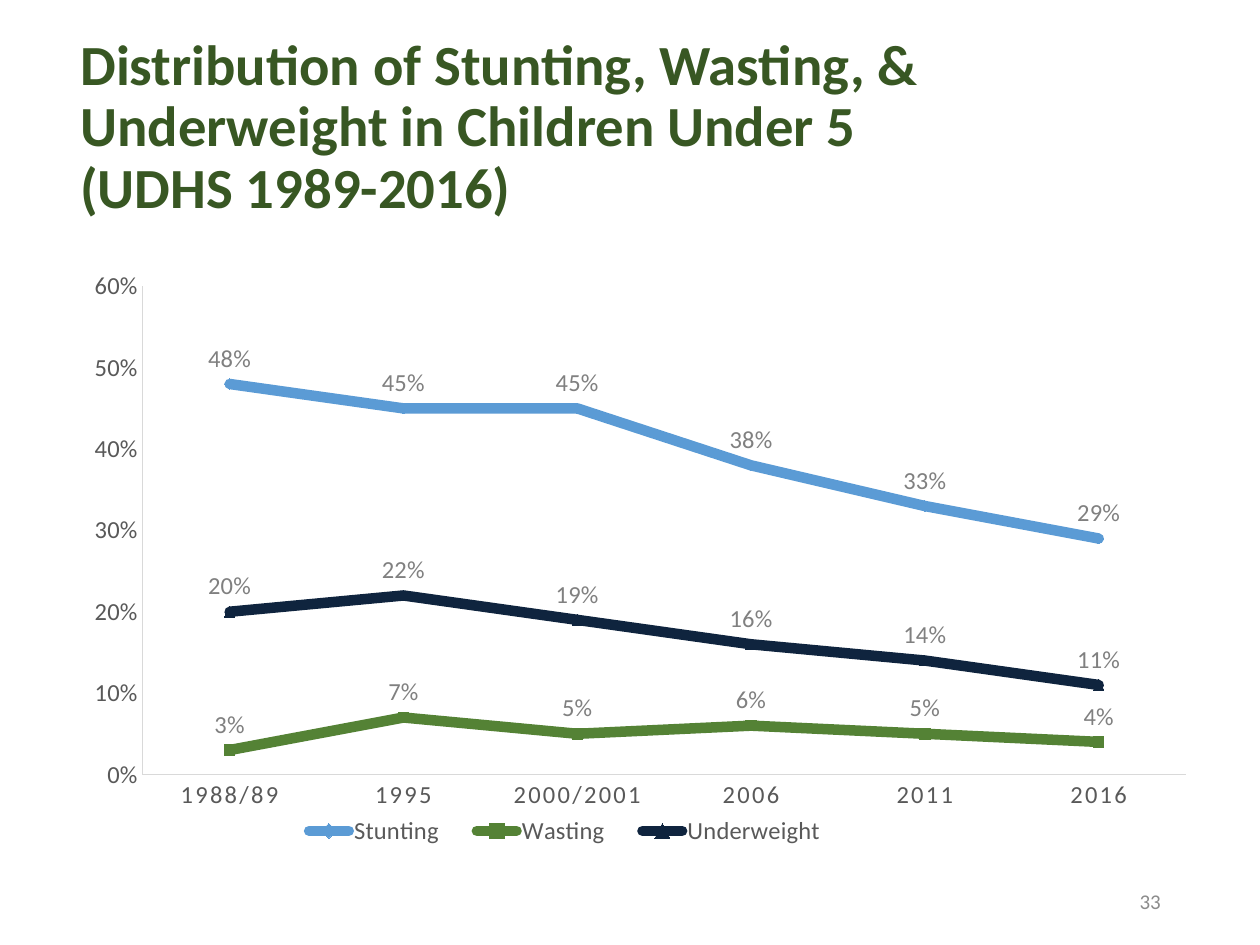
from lxml import etree
from pptx import Presentation
from pptx import util as u
from pptx.chart.data import CategoryChartData
from pptx.dml.color import RGBColor
from pptx.enum import chart as ch, text
from pptx.oxml.ns import qn

# Content
TITLE = ["Distribution of Stunting, Wasting, &",
         "Underweight in Children Under 5",
         "(UDHS 1989-2016)"]
NUMBER = "33"
YEARS = ["1988/89", "1995", "2000/2001", "2006", "2011", "2016"]
MARK = ch.XL_MARKER_STYLE
SERIES = [  # name, values, line colour, marker, marker colour
    ("Stunting", [0.48, 0.45, 0.45, 0.38, 0.33, 0.29],
     "5B9BD5", MARK.DIAMOND, "5B9BD5"),
    ("Wasting", [0.03, 0.07, 0.05, 0.06, 0.05, 0.04],
     "548235", MARK.SQUARE, "548235"),
    ("Underweight", [0.2, 0.22, 0.19, 0.16, 0.14, 0.11],
     "0F243E", MARK.TRIANGLE, "A5A5A5"),
]

THEME = dict(font="Calibri", title="385723", axis="595959", label="808080",
             rule="D9D9D9", number="8C8C8C",
             big=32.4, mid=14, small=12, thick=6, thin=0.75)

# Places in cm: left, top, width, height
HEAD = (1.37, 0.61, 22.99, 3.96)
CHART = (1.57, 3.45, 22.56, 14)
FOOT = (17.93, 17.65, 5.72, 1.02)
# Places as shares of the chart
PLOT = (0.058, 0.166, 0.932, 0.703)
KEY = (0.18, 0.925, 0.51, 0.05)


def style(font, size, color, bold=False):
    font.name, font.size, font.bold = THEME["font"], u.Pt(size), bold
    font.color.rgb = RGBColor.from_string(color)


def stroke(line, color, width):
    line.color.rgb = RGBColor.from_string(color)
    line.width = u.Pt(width)


def write(slide, place, lines, size, color, bold=False, align=None):
    frame = slide.shapes.add_textbox(*map(u.Cm, place)).text_frame
    frame.word_wrap = True
    frame.vertical_anchor = text.MSO_ANCHOR.MIDDLE
    para = frame.paragraphs[0]
    para.alignment = align
    for i, line in enumerate(lines):
        if i:
            para.add_line_break()
        run = para.add_run()
        run.text = line
        style(run.font, size, color, bold)
    return para


def pin(node, at, place, inner=False):
    """Fix a chart part at a share of the chart's area."""
    for old in node.findall(qn("c:layout")):
        node.remove(old)
    layout = etree.Element(qn("c:layout"))
    manual = etree.SubElement(layout, qn("c:manualLayout"))
    pairs = [("xMode", "edge"), ("yMode", "edge"), *zip("xywh", place)]
    if inner:
        pairs.insert(0, ("layoutTarget", "inner"))
    for tag, val in pairs:
        etree.SubElement(manual, qn("c:" + tag)).set("val", str(val))
    node.insert(at, layout)


def draw(slide):
    data = CategoryChartData(number_format="0%")
    data.categories = YEARS
    for name, vals, *_ in SERIES:
        data.add_series(name, vals)
    chart = slide.shapes.add_chart(ch.XL_CHART_TYPE.LINE_MARKERS,
                                   *map(u.Cm, CHART), data).chart
    chart.has_title = False
    style(chart.font, THEME["mid"], "000000")

    # Axes
    for axis in (chart.category_axis, chart.value_axis):
        axis.has_major_gridlines = False
        axis.major_tick_mark = axis.minor_tick_mark = ch.XL_TICK_MARK.NONE
        stroke(axis.format.line, THEME["rule"], THEME["thin"])
        style(axis.tick_labels.font, THEME["mid"], THEME["axis"])
    props = chart.category_axis._element.find(".//" + qn("a:defRPr"))
    props.set("spc", "120")
    scale = chart.value_axis
    scale.minimum_scale, scale.maximum_scale, scale.major_unit = 0, 0.6, 0.1
    scale.tick_labels.number_format = "0%"
    scale.tick_labels.number_format_is_linked = False

    # Lines, markers and labels
    plot = chart.plots[0]
    plot.vary_by_categories = False
    for ser, (_, _, color, mark, fill) in zip(plot.series, SERIES):
        ser.smooth = False
        stroke(ser.format.line, color, THEME["thick"])
        ser.format.line._ln.set("cap", "rnd")
        ser.marker.style, ser.marker.size = mark, 6
        ser.marker.format.fill.solid()
        ser.marker.format.fill.fore_color.rgb = RGBColor.from_string(fill)
        stroke(ser.marker.format.line, fill, THEME["thin"])
        tags = ser.data_labels
        tags.show_value = True
        tags.position = ch.XL_LABEL_POSITION.ABOVE
        tags.number_format, tags.number_format_is_linked = "0%", False
        style(tags.font, THEME["mid"], THEME["label"])

    # Legend
    chart.has_legend = True
    key = chart.legend
    key.position = ch.XL_LEGEND_POSITION.TOP
    key.include_in_layout = False
    style(key.font, THEME["mid"], THEME["axis"])
    pin(key._element, 1, KEY)
    pin(plot._element.getparent(), 0, PLOT, inner=True)


def main():
    deck = Presentation()
    deck.slide_width, deck.slide_height = u.Cm(25.4), u.Cm(19.05)
    slide = deck.slides.add_slide(deck.slide_layouts[6])
    write(slide, FOOT, [NUMBER], THEME["small"], THEME["number"],
          align=text.PP_ALIGN.RIGHT)
    draw(slide)
    head = write(slide, HEAD, TITLE, THEME["big"], THEME["title"], bold=True)
    head.line_spacing = 0.9
    deck.save("out.pptx")


if __name__ == "__main__":
    main()
